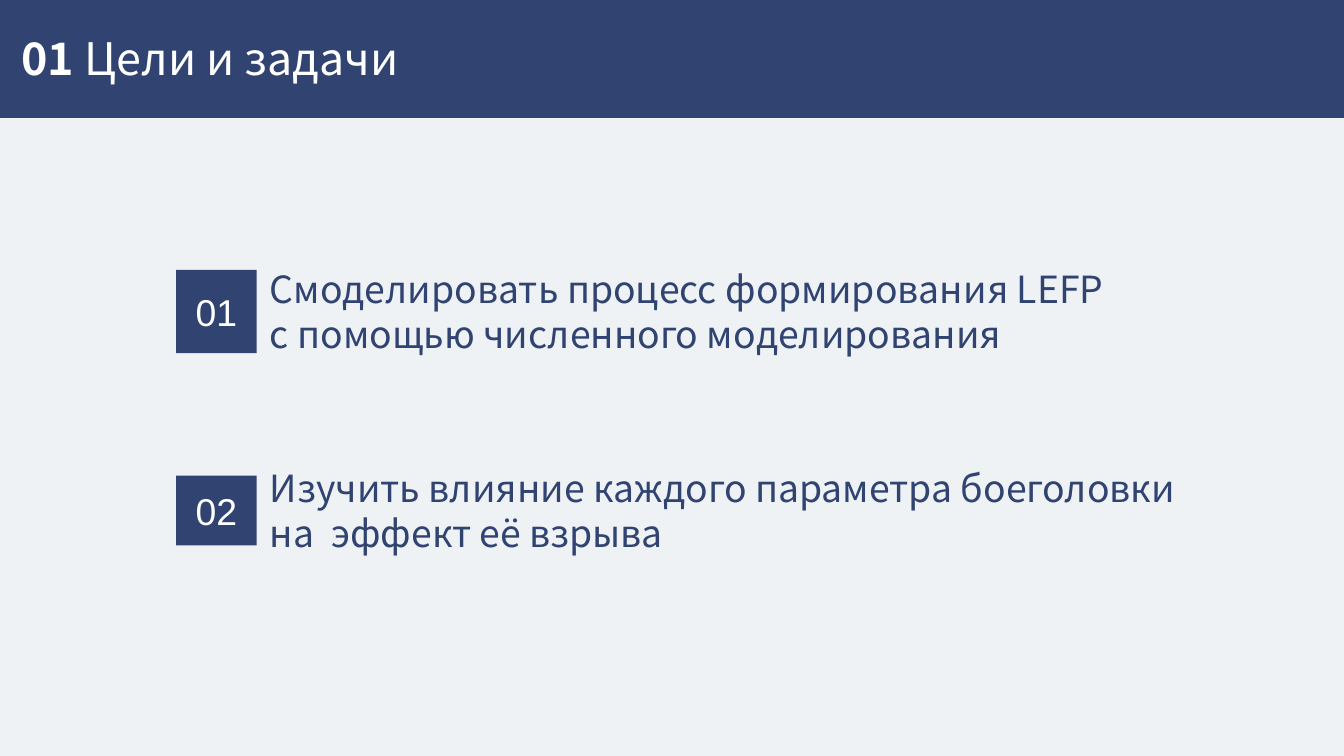
"""Build the goals and objectives slide."""
import dataclasses

import pptx
import pptx.dml.color
import pptx.enum.shapes
import pptx.enum.text
import pptx.util

NAVY = "304371"
WHITE = "FFFFFF"
PALE = "EEF2F5"
TEXT_FONT = "Noto Sans CJK SC"
NUMBER_FONT = "Arial"
BADGE_LEFT = 94.4
BADGE_WIDTH = 43.1
TEXT_HEIGHT = 55.7


@dataclasses.dataclass(frozen=True)
class Goal:
    number: str
    lines: tuple[str, ...]
    middle: float
    badge_height: float
    text_width: float


GOALS = (
    Goal("01", ("Смоделировать процесс формирования LEFP",
                "с помощью численного моделирования"), 166.9, 44.6, 473),
    Goal("02", ("Изучить влияние каждого параметра боеголовки",
                "на  эффект её взрыва"), 273.5, 37.4, 510.5),
)


def paint(target, color: str) -> None:
    """Give a fill or font a solid hex colour."""
    if isinstance(target, pptx.dml.fill.FillFormat):
        target.solid()
        target.fore_color.rgb = pptx.dml.color.RGBColor.from_string(color)
    else:
        target.color.rgb = pptx.dml.color.RGBColor.from_string(color)


def points(*lengths: float) -> list[pptx.util.Length]:
    """Convert numbers to lengths in points."""
    return [pptx.util.Pt(length) for length in lengths]


def style(para, name: str, size: float, color: str) -> None:
    """Set the font of a whole paragraph."""
    para.font.name = name
    para.font.size = pptx.util.Pt(size)
    paint(para.font, color)


def add_block(page, left: float, top: float, width: float, height: float):
    """Draw a plain navy rectangle."""
    block = page.shapes.add_shape(
        pptx.enum.shapes.MSO_SHAPE.RECTANGLE, *points(left, top, width, height))
    block.shadow.inherit = False
    paint(block.fill, NAVY)
    block.line.fill.background()
    return block


def add_text(page, left: float, top: float, width: float, height: float, wrap: bool):
    """Add a text box that grows with its text and return its frame."""
    box = page.shapes.add_textbox(*points(left, top, width, height))
    box.text_frame.word_wrap = wrap
    box.text_frame.auto_size = pptx.enum.text.MSO_AUTO_SIZE.SHAPE_TO_FIT_TEXT
    return box.text_frame


def add_title(page) -> None:
    """Draw the header band with its numbered title."""
    add_block(page, 0, 0, 720, 63.2)
    para = add_text(page, 4.3, 13, 709.2, 36, True).paragraphs[0]
    style(para, TEXT_FONT, 24, WHITE)
    for text, bold in (("01 ", True), ("Цели и задачи", False)):
        span = para.add_run()
        span.text = text
        span.font.bold = bold


def add_goal(page, goal: Goal) -> None:
    """Draw a numbered badge and the goal beside it."""
    frame = add_text(page, BADGE_LEFT + BADGE_WIDTH, goal.middle - TEXT_HEIGHT / 2,
                     goal.text_width, TEXT_HEIGHT, False)
    frame.text = "\n".join(goal.lines)
    for para in frame.paragraphs:
        style(para, TEXT_FONT, 20, NAVY)
    badge = add_block(page, BADGE_LEFT, goal.middle - goal.badge_height / 2,
                      BADGE_WIDTH, goal.badge_height)
    badge.text_frame.text = goal.number
    badge.text_frame.vertical_anchor = pptx.enum.text.MSO_ANCHOR.MIDDLE
    para = badge.text_frame.paragraphs[0]
    para.alignment = pptx.enum.text.PP_ALIGN.CENTER
    style(para, NUMBER_FONT, 20, WHITE)


def main() -> None:
    """Build and save the deck."""
    deck = pptx.Presentation()
    deck.slide_width, deck.slide_height = points(720, 405)
    page = deck.slides.add_slide(deck.slide_layouts[6])
    paint(page.background.fill, PALE)
    add_title(page)
    for goal in GOALS:
        add_goal(page, goal)
    deck.save("out.pptx")


if __name__ == "__main__":
    main()
